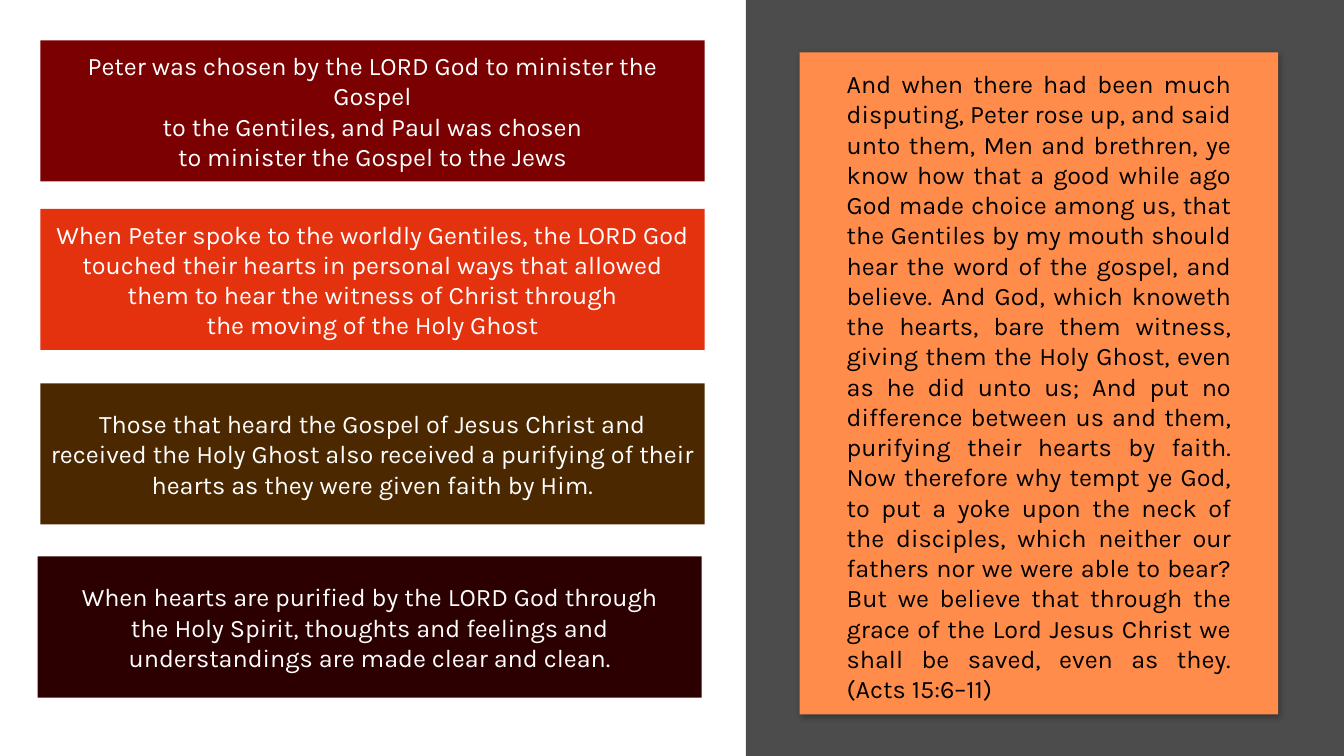
from dataclasses import dataclass

from lxml.etree import SubElement
from pptx import Presentation
from pptx.dml.color import RGBColor
from pptx.enum.shapes import MSO_SHAPE
from pptx.enum.text import MSO_ANCHOR, MSO_AUTO_SIZE, PP_ALIGN
from pptx.oxml.ns import qn
from pptx.util import Pt


@dataclass(frozen=True)
class Theme:
    """Colours, font and type size of the slide."""
    font: str = "Karla"
    body_size: int = 18
    black: str = "000000"
    white: str = "FFFFFF"
    scripture: str = "FF8C4A"
    maroon: str = "7A0001"
    red: str = "E4310E"
    brown: str = "4B2800"
    dark: str = "2C0000"


THEME = Theme()

POINTS = [
    (28.8, 28.8, THEME.maroon,
     "Peter was chosen by the LORD God to minister the Gospel\n"
     "to the Gentiles, and Paul was chosen\n"
     "to minister the Gospel to the Jews"),
    (28.8, 149.2, THEME.red,
     "When Peter spoke to the worldly Gentiles, the LORD God touched their "
     "hearts in personal ways that allowed\n"
     "them to hear the witness of Christ through\n"
     "the moving of the Holy Ghost"),
    (28.8, 273.8, THEME.brown,
     "Those that heard the Gospel of Jesus Christ and received the Holy "
     "Ghost also received a purifying of their\n"
     "hearts as they were given faith by Him."),
    (26.8, 397.5, THEME.dark,
     "When hearts are purified by the LORD God through\n"
     "the Holy Spirit, thoughts and feelings and\n"
     "understandings are made clear and clean."),
]

SCRIPTURE = (
    "And when there had been much disputing, Peter rose up, and said unto "
    "them, Men and brethren, ye know how that a good while ago God made "
    "choice among us, that the Gentiles by my mouth should hear the word of "
    "the gospel, and believe. And God, which knoweth the hearts, bare them "
    "witness, giving them the Holy Ghost, even as he did unto us; And put no "
    "difference between us and them, purifying their hearts by faith. Now "
    "therefore why tempt ye God, to put a yoke upon the neck of the "
    "disciples, which neither our fathers nor we were able to bear? But we "
    "believe that through the grace of the Lord Jesus Christ we shall be "
    "saved, even as they. (Acts 15:6–11)"
)


def add_panel(slide, left, top, width, height, color):
    """Add a borderless filled rectangle without a shadow."""
    shape = slide.shapes.add_shape(
        MSO_SHAPE.RECTANGLE, Pt(left), Pt(top), Pt(width), Pt(height))
    shape.shadow.inherit = False
    shape.fill.solid()
    shape.fill.fore_color.rgb = RGBColor.from_string(color)
    shape.line.fill.background()
    return shape


def set_alpha(color_element, percent):
    """Give a colour element an opacity in percent."""
    SubElement(color_element, qn("a:alpha"), val=str(percent * 1000))


def add_soft_shadow(shape):
    """Give a panel a soft shadow falling down and to the right."""
    effects = shape.element.spPr.find(qn("a:effectLst"))
    shadow = SubElement(
        effects, qn("a:outerShdw"), blurRad=str(Pt(4.5)), dist=str(Pt(2.6)),
        dir=str(53 * 60000), algn="tl", rotWithShape="0")
    set_alpha(SubElement(shadow, qn("a:srgbClr"), val=THEME.black), 30)


def write_text(shape, text, color, alignment):
    """Write and format the wrapped text of a shape."""
    frame = shape.text_frame
    frame.word_wrap = True
    frame.text = text
    for paragraph in frame.paragraphs:
        paragraph.alignment = alignment
        for run in paragraph.runs:
            run.font.name = THEME.font
            run.font.size = Pt(THEME.body_size)
            run.font.color.rgb = RGBColor.from_string(color)


def add_point(slide, left, top, color, text):
    """Add one coloured box with a centred statement."""
    shape = add_panel(slide, left, top, 474.5, 100.8, color)
    write_text(shape, text, THEME.white, PP_ALIGN.CENTER)
    shape.text_frame.vertical_anchor = MSO_ANCHOR.MIDDLE


def add_scripture(slide):
    """Add the side panel, the card and the justified passage on it."""
    side = add_panel(slide, 532.8, 0, 427.2, 540, THEME.black)
    set_alpha(side.element.spPr.find(f".//{qn('a:srgbClr')}"), 70)
    card = add_panel(slide, 571.2, 37.4, 341.8, 473, THEME.scripture)
    add_soft_shadow(card)
    passage = slide.shapes.add_textbox(
        Pt(597.7), Pt(45.4), Pt(288.7), Pt(443.5))
    write_text(passage, SCRIPTURE, THEME.black, PP_ALIGN.JUSTIFY)
    passage.text_frame.auto_size = MSO_AUTO_SIZE.SHAPE_TO_FIT_TEXT


def main():
    """Build and save the slide."""
    presentation = Presentation()
    presentation.slide_width = Pt(960)
    presentation.slide_height = Pt(540)
    slide = presentation.slides.add_slide(presentation.slide_layouts[6])
    add_scripture(slide)
    for point in POINTS:
        add_point(slide, *point)
    presentation.save("out.pptx")


if __name__ == "__main__":
    main()
